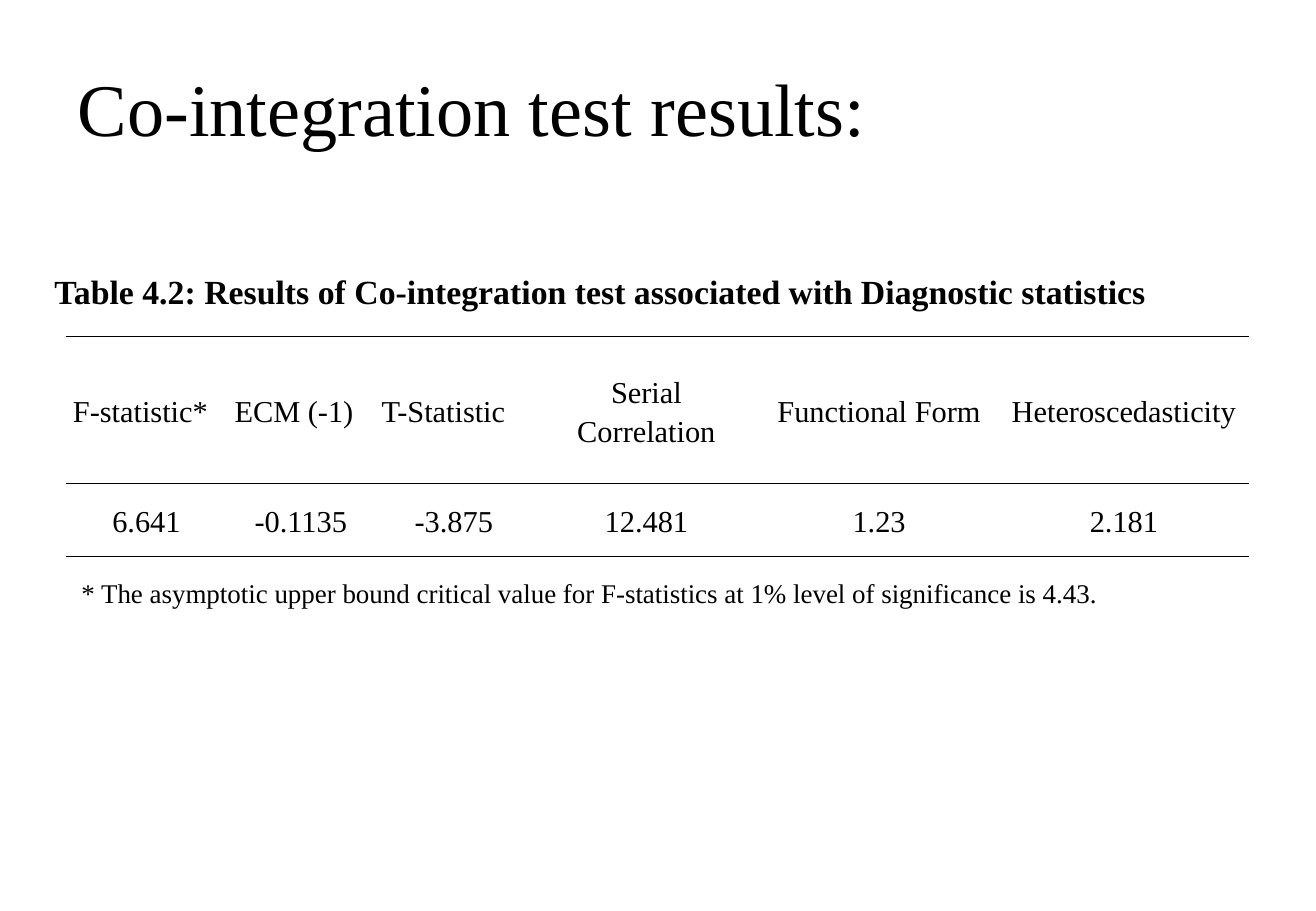
from dataclasses import dataclass

from lxml.etree import SubElement
from pptx import Presentation
from pptx.dml.color import RGBColor
from pptx.enum.text import MSO_ANCHOR, PP_ALIGN
from pptx.oxml.ns import qn
from pptx.util import Emu, Inches, Pt

FONT = "Times New Roman"
INK = "000000"
WIDTH, HEIGHT = Inches(10.83), Inches(7.5)

# Table grid in inches
COLUMNS = [1.33, 1.21, 1.31, 1.86, 1.97, 2.06]
ROWS = [1.21, 0.6]
RESULTS = [
    ("F-statistic*", "ECM (-1)", "T-Statistic", "Serial Correlation",
     "Functional Form", "Heteroscedasticity"),
    ("6.641", "-0.1135", "-3.875", "12.481", "1.23", "2.181"),
]
JUSTIFIED_HEADERS = 3
# Rule weights in points: above the header, below it, below the values
RULES = [1, 0.5, 1]


@dataclass
class Label:
    """Text with its place given as shares of the slide's size."""
    text: str
    left: float
    top: float
    width: float
    height: float
    size: float
    bold: bool = False
    spacing: float = 1.0
    inset_x: float = 0.08
    inset_y: float = 0.04


LABELS = [
    Label("Co-integration test results:", 0.05, 0.04, 0.9, 0.1667, 44,
          spacing=0.9, inset_x=0.1, inset_y=0.05),
    Label("Table 4.2: Results of Co-integration test associated with Diagnostic statistics",
          0.034, 0.2925, 0.9, 0.0533, 20, bold=True),
    Label("* The asymptotic upper bound critical value for F-statistics at 1% level of significance is 4.43.",
          0.0545, 0.6285, 0.88, 0.0453, 16),
]


def color(value: str) -> RGBColor:
    return RGBColor.from_string(value)


def style(p, size: float, bold: bool, spacing: float) -> None:
    p.line_spacing = spacing
    for r in p.runs:
        r.font.name = FONT
        r.font.size = Pt(size)
        r.font.bold = bold
        r.font.color.rgb = color(INK)


def add_label(s, label: Label) -> None:
    sp = s.shapes.add_textbox(
        Emu(int(label.left * WIDTH)), Emu(int(label.top * HEIGHT)),
        Emu(int(label.width * WIDTH)), Emu(int(label.height * HEIGHT)))
    tf = sp.text_frame
    tf.word_wrap = True
    tf.vertical_anchor = MSO_ANCHOR.MIDDLE
    tf.margin_left = tf.margin_right = Inches(label.inset_x)
    tf.margin_top = tf.margin_bottom = Inches(label.inset_y)
    tf.text = label.text
    style(tf.paragraphs[0], label.size, label.bold, label.spacing)


def set_borders(cell, top: float, bottom: float) -> None:
    tc_pr = cell._tc.get_or_add_tcPr()
    weights = {"a:lnL": 0, "a:lnR": 0, "a:lnT": top, "a:lnB": bottom}
    for i, (tag, weight) in enumerate(weights.items()):
        ln = SubElement(tc_pr, qn(tag), w=str(Pt(weight)))
        if weight:
            fill = SubElement(ln, qn("a:solidFill"))
            SubElement(fill, qn("a:srgbClr"), val=INK)
        else:
            SubElement(ln, qn("a:noFill"))
        tc_pr.insert(i, ln)


def add_results(s) -> None:
    table = s.shapes.add_table(
        len(ROWS), len(COLUMNS), Inches(0.54), Inches(2.77),
        Inches(sum(COLUMNS)), Inches(sum(ROWS))).table
    table.first_row = table.horz_banding = False
    for column, width in zip(table.columns, COLUMNS):
        column.width = Inches(width)
    for i, (row, height) in enumerate(zip(table.rows, ROWS)):
        row.height = Inches(height)
        for j, cell in enumerate(row.cells):
            cell.fill.background()
            cell.vertical_anchor = MSO_ANCHOR.MIDDLE
            cell.margin_left = cell.margin_right = Inches(0.06)
            cell.margin_top = cell.margin_bottom = 0
            cell.text_frame.text = RESULTS[i][j]
            p = cell.text_frame.paragraphs[0]
            justified = i == 0 and j < JUSTIFIED_HEADERS
            p.alignment = PP_ALIGN.JUSTIFY if justified else PP_ALIGN.CENTER
            style(p, 18, False, 1.15)
            set_borders(cell, RULES[i], RULES[i + 1])


def main() -> None:
    prs = Presentation()
    prs.slide_width, prs.slide_height = WIDTH, HEIGHT
    s = prs.slides.add_slide(prs.slide_layouts[6])

    # Title, table caption and footnote
    for label in LABELS:
        add_label(s, label)

    # Test statistics
    add_results(s)
    prs.save("out.pptx")


if __name__ == "__main__":
    main()
